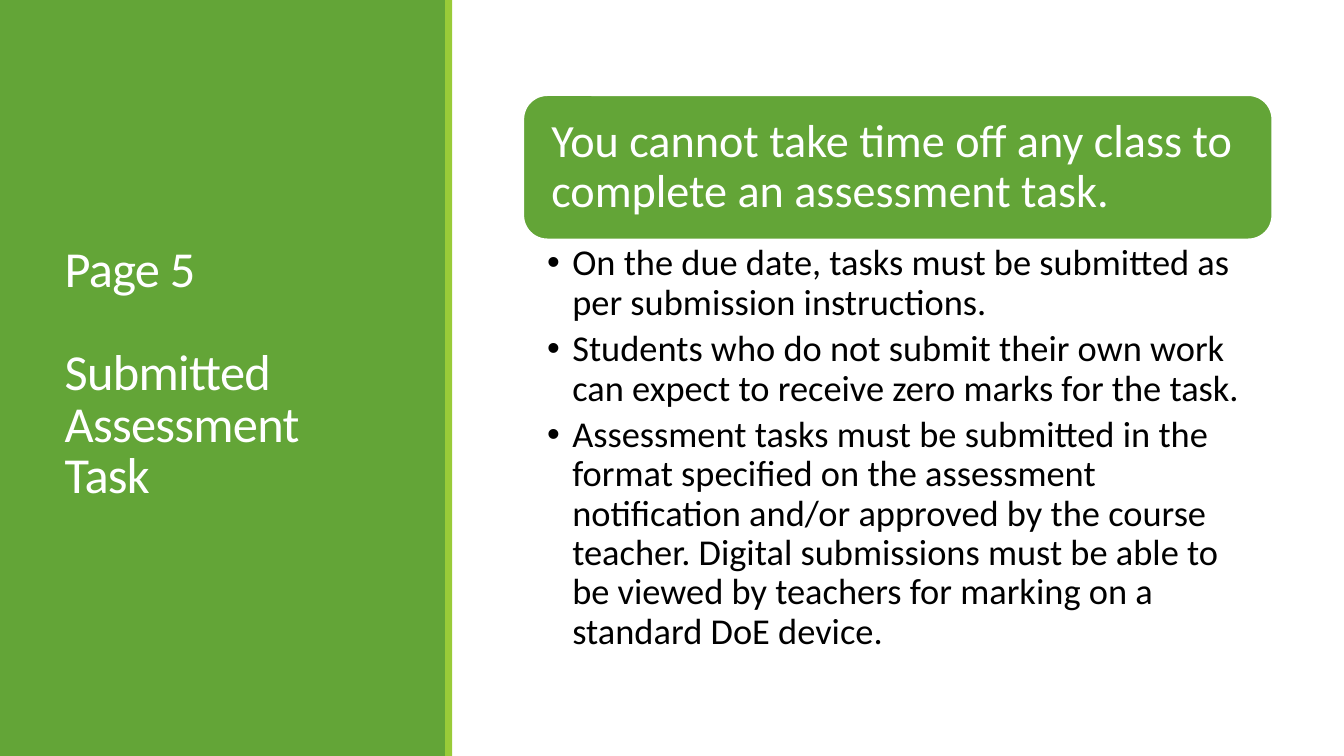
"""Build the slide on submitting assessment tasks."""
from pptx import Presentation
from pptx.dml.color import RGBColor
from pptx.enum.shapes import MSO_SHAPE
from pptx.enum.text import MSO_ANCHOR, MSO_AUTO_SIZE, PP_ALIGN
from pptx.util import Pt

COLORS = {"green": "63A537", "lime": "99CB38", "white": "FFFFFF", "black": "000000"}
RULES = [
    "On the due date, tasks must be submitted as per submission instructions.",
    "Students who do not submit their own work can expect to receive zero marks for the task.",
    "Assessment tasks must be submitted in the format specified on the assessment "
    "notification and/or approved by the course teacher. Digital submissions must be "
    "able to be viewed by teachers for marking on a standard DoE device.",
]


def add_block(kind, left, top, width, height, color):
    block = slide.shapes.add_shape(kind, Pt(left), Pt(top), Pt(width), Pt(height))
    block.shadow.inherit = False
    block.fill.solid()
    block.fill.fore_color.rgb = RGBColor.from_string(COLORS[color])
    block.line.fill.background()
    return block


def format_text(shape, size, color, line_spacing, anchor, insets):
    frame = shape.text_frame
    frame.word_wrap = True
    frame.auto_size = MSO_AUTO_SIZE.NONE
    frame.vertical_anchor = anchor
    frame.margin_left, frame.margin_top, frame.margin_right, frame.margin_bottom = map(Pt, insets)
    for para in frame.paragraphs:
        para.alignment = PP_ALIGN.LEFT
        para.line_spacing = line_spacing
        para.space_before = Pt(0)
        for span in para.runs:
            span.font.name = "Calibri"
            span.font.size = Pt(size)
            span.font.color.rgb = RGBColor.from_string(COLORS[color])


deck = Presentation()
deck.slide_width, deck.slide_height = Pt(960), Pt(540)
slide = deck.slides.add_slide(deck.slide_layouts[1])
title, body = slide.placeholders

add_block(MSO_SHAPE.RECTANGLE, 0, 0, 319, 540, "green")
add_block(MSO_SHAPE.RECTANGLE, 318, 0, 5, 540, "lime")

title.left, title.top, title.width, title.height = Pt(39), Pt(41), Pt(243), Pt(454)
title.text_frame.text = "Page 5\nSubmitted Assessment Task"
format_text(title, 36, "white", 0.85, MSO_ANCHOR.MIDDLE, (7.2, 3.6, 7.2, 3.6))
title.text_frame.paragraphs[1].space_before = Pt(37)
for para in title.text_frame.paragraphs:
    for span in para.runs:
        span.font._element.set("spc", "-50")
slide.shapes._spTree.append(title._element)

banner = add_block(MSO_SHAPE.ROUNDED_RECTANGLE, 373.8, 68, 535, 103, "green")
banner.line.color.rgb = RGBColor.from_string(COLORS["white"])
banner.line.width = Pt(1.25)
banner.text_frame.text = "You cannot take time off any class to complete an assessment task."
format_text(banner, 33, "white", 0.9, MSO_ANCHOR.MIDDLE, (15, 15, 15, 15))

body.left, body.top, body.width, body.height = Pt(373.8), Pt(171), Pt(535), Pt(307)
body.text_frame.text = "\n".join(RULES)
format_text(body, 26, "black", 0.9, MSO_ANCHOR.TOP, (17, 3.6, 18.5, 3.6))
for para in body.text_frame.paragraphs:
    para.space_after = Pt(5.2)
    properties = para._p.get_or_add_pPr()
    properties.set("marL", str(Pt(18)))
    properties.set("indent", str(-Pt(18)))

deck.save("out.pptx")
